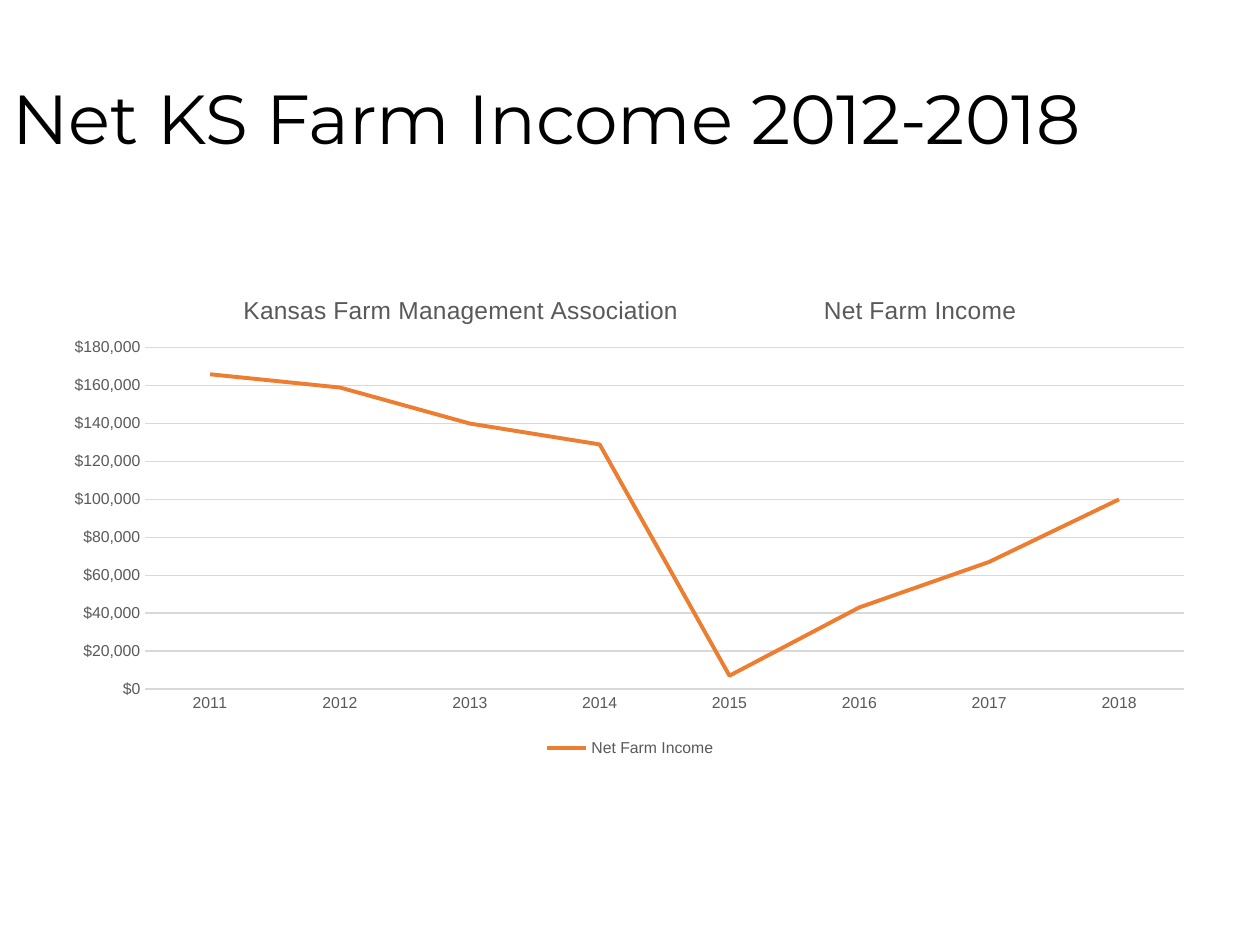
import pptx
import pptx.chart.data
import pptx.dml.color
import pptx.enum.chart
import pptx.enum.text
import pptx.oxml
import pptx.oxml.ns
import pptx.util
from pptx.util import Inches

COLOURS = {"title": "000000", "label": "595959", "grid": "D9D9D9", "income": "ED7D31"}
INCOME = {
    "2011": 166000, "2012": 159000, "2013": 140000, "2014": 129000,
    "2015": 7000, "2016": 43000, "2017": 67000, "2018": 100000,
}


def colour(name):
    return pptx.dml.color.RGBColor.from_string(COLOURS[name])


def format_font(font, size, face="Arial", tint="label"):
    font.size = pptx.util.Pt(size)
    font.name = face
    font.bold = False
    font.color.rgb = colour(tint)


def add_text(para, text, spacing=0, **style):
    """Add a span to para; spacing is the extra letter gap in points."""
    span = para.add_run()
    span.text = text
    format_font(span.font, **style)
    if spacing:
        span.font._element.set("spc", str(round(spacing * 100)))


def format_line(line, tint, width):
    line.color.rgb = colour(tint)
    line.width = pptx.util.Pt(width)


def set_plot_area(chart, left, top, width, height):
    """Fix the inner plot area, in fractions of the chart's size."""
    plot_area = chart._chartSpace.chart.plotArea
    for layout in plot_area.findall(pptx.oxml.ns.qn("c:layout")):
        plot_area.remove(layout)
    plot_area.insert(0, pptx.oxml.parse_xml(
        f'<c:layout {pptx.oxml.ns.nsdecls("c")}><c:manualLayout>'
        '<c:layoutTarget val="inner"/><c:xMode val="edge"/><c:yMode val="edge"/>'
        f'<c:x val="{left}"/><c:y val="{top}"/><c:w val="{width}"/><c:h val="{height}"/>'
        '</c:manualLayout></c:layout>'))


def place_title(page, left, top, width, height):
    box = page.shapes.title
    box.left, box.top, box.width, box.height = left, top, width, height
    frame = box.text_frame
    frame.vertical_anchor = pptx.enum.text.MSO_ANCHOR.MIDDLE
    para = frame.paragraphs[0]
    para.alignment = pptx.enum.text.PP_ALIGN.LEFT
    para.line_spacing = 0.9
    add_text(para, "Net KS Farm Income 2012-2018", size=39.6, face="Montserrat", tint="title")


def format_axes(chart):
    for axis in (chart.category_axis, chart.value_axis):
        axis.major_tick_mark = pptx.enum.chart.XL_TICK_MARK.NONE
        axis.minor_tick_mark = pptx.enum.chart.XL_TICK_MARK.NONE
        format_font(axis.tick_labels.font, size=9)
    format_line(chart.category_axis.format.line, "grid", 0.75)

    values = chart.value_axis
    values.minimum_scale, values.maximum_scale, values.major_unit = 0, 180000, 20000
    values.format.line.fill.background()
    values.has_major_gridlines = True
    format_line(values.major_gridlines.format.line, "grid", 0.75)
    values.tick_labels.number_format = '"$"#,##0'
    values.tick_labels.number_format_is_linked = False


def place_income_chart(page, left, top, width, height):
    data = pptx.chart.data.CategoryChartData(number_format='"$"#,##0')
    data.categories = list(INCOME)
    data.add_series("Net Farm Income", list(INCOME.values()))
    chart = page.shapes.add_chart(
        pptx.enum.chart.XL_CHART_TYPE.LINE, left, top, width, height, data).chart
    format_font(chart.font, size=10, tint="title")

    chart.has_title = True
    heading = chart.chart_title.text_frame.paragraphs[0]
    add_text(heading, "Kansas Farm Management Association", size=14)
    add_text(heading, " ", size=14, spacing=79)
    add_text(heading, "Net Farm Income", size=14)
    chart.chart_title.include_in_layout = False

    chart.has_legend = True
    chart.legend.position = pptx.enum.chart.XL_LEGEND_POSITION.BOTTOM
    chart.legend.include_in_layout = False
    format_font(chart.legend.font, size=9)

    format_axes(chart)
    set_plot_area(chart, 0.08, 0.15, 0.9, 0.7)
    plot = chart.plots[0]
    plot.vary_by_categories = False
    series = plot.series[0]
    series.smooth = False
    series.marker.style = pptx.enum.chart.XL_MARKER_STYLE.NONE
    format_line(series.format.line, "income", 2.25)


def main():
    deck = pptx.Presentation()
    deck.slide_width, deck.slide_height = Inches(10), Inches(7.5)
    page = deck.slides.add_slide(deck.slide_layouts[5])
    place_title(page, Inches(0), Inches(0.47), Inches(10), Inches(1))
    place_income_chart(page, Inches(0.42), Inches(2.18), Inches(9.16), Inches(3.87))
    deck.save("out.pptx")


if __name__ == "__main__":
    main()
